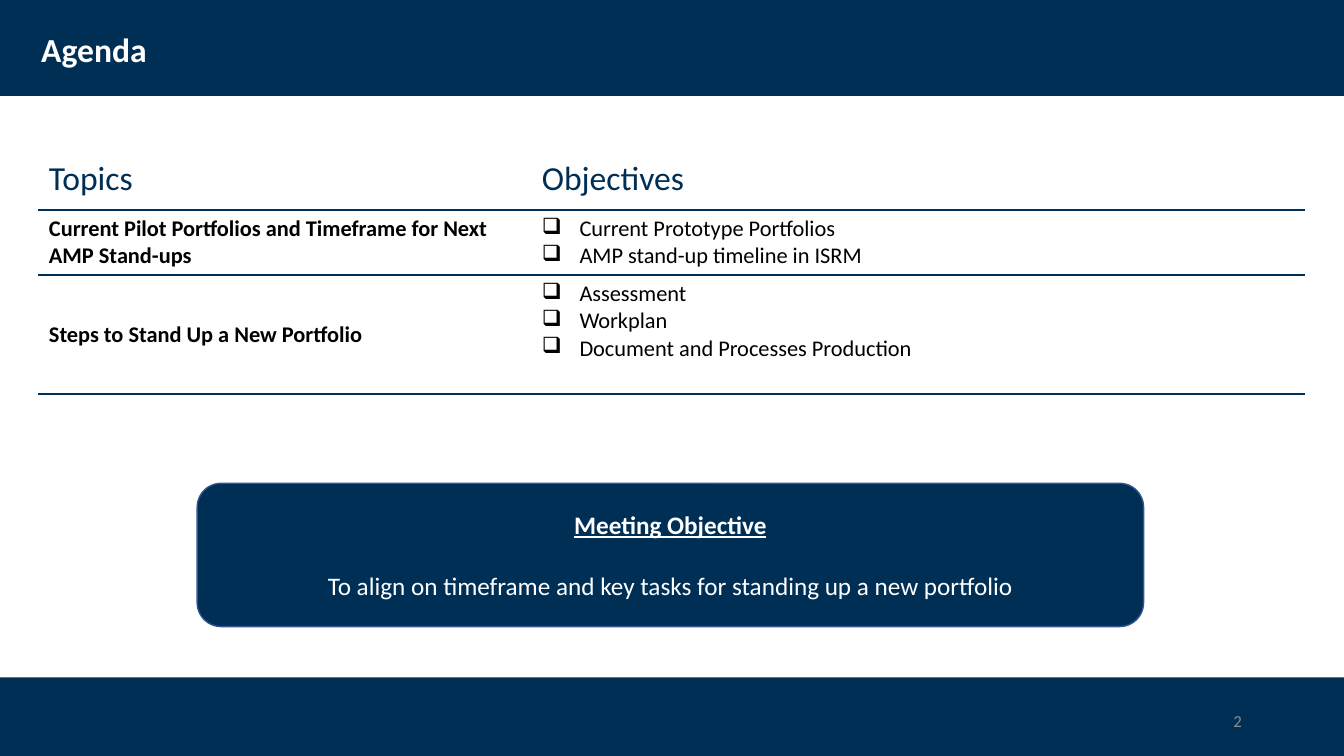
from lxml import etree
from pptx import Presentation
from pptx.dml.color import RGBColor
from pptx.enum.shapes import MSO_SHAPE
from pptx.enum.text import MSO_ANCHOR, PP_ALIGN
from pptx.oxml.ns import qn
from pptx.util import Cm, Pt

RECTANGLE, ROUNDED = MSO_SHAPE.RECTANGLE, MSO_SHAPE.ROUNDED_RECTANGLE
MIDDLE, TOP = MSO_ANCHOR.MIDDLE, MSO_ANCHOR.TOP
LEFT, CENTER, RIGHT = PP_ALIGN.LEFT, PP_ALIGN.CENTER, PP_ALIGN.RIGHT

WIDTH, HEIGHT = 33.87, 19.05
COLORS = {"navy": "002F56", "outline": "325491", "white": "FFFFFF",
          "black": "000000", "gray": "8C8C8C"}
FONT = "Calibri"
BULLET_INDENT = Cm(0.95)

HEADINGS = ["Topics", "Objectives"]
AGENDA = [
    ("Current Pilot Portfolios and Timeframe for Next AMP Stand-ups",
     ["Current Prototype Portfolios", "AMP stand-up timeline in ISRM"]),
    ("Steps to Stand Up a New Portfolio",
     ["Assessment", "Workplan", "Document and Processes Production"]),
]
COLUMN_WIDTHS = [12.42, 19.48]
ROW_HEIGHTS = [1.42, 1.64, 3.0]


def color(name):
    return RGBColor.from_string(COLORS[name])


class SlideBuilder:
    """Holds the slide and draws its elements in one style; lengths in cm."""

    def __init__(self, slide):
        self.slide = slide

    def fill_text(self, frame, lines, size, color_name, bold=False, align=LEFT, bullet=None):
        for index, line in enumerate(lines):
            paragraph = frame.paragraphs[0] if index == 0 else frame.add_paragraph()
            paragraph.text = line
            paragraph.alignment = align
            if bullet:
                self.add_bullet(paragraph, bullet)
            font = paragraph.font
            font.name, font.size, font.bold = FONT, Pt(size), bold
            font.color.rgb = color(color_name)

    def add_bullet(self, paragraph, character):
        properties = paragraph._p.get_or_add_pPr()
        properties.set("marL", str(BULLET_INDENT))
        properties.set("indent", str(-BULLET_INDENT))
        etree.SubElement(properties, qn("a:buChar"), char=character)

    def block(self, kind, left, top, width, height, line=None):
        shape = self.slide.shapes.add_shape(kind, Cm(left), Cm(top), Cm(width), Cm(height))
        shape.shadow.inherit = False
        shape.fill.solid()
        shape.fill.fore_color.rgb = color("navy")
        if line:
            shape.line.color.rgb = color(line)
            shape.line.width = Pt(1)
        else:
            shape.line.fill.background()
        return shape

    def text(self, text, left, top, width, height, size, color_name, **style):
        box = self.slide.shapes.add_textbox(Cm(left), Cm(top), Cm(width), Cm(height))
        frame = box.text_frame
        frame.word_wrap = True
        frame.vertical_anchor = MIDDLE
        self.fill_text(frame, [text], size, color_name, **style)
        return frame

    def cell_borders(self, cell, top_color):
        properties = cell._tc.get_or_add_tcPr()
        borders = [("L", "white", 1), ("R", "white", 1),
                   ("T", top_color, 1.5), ("B", "navy", 1.5)]
        for side, name, width in borders:
            line = etree.SubElement(properties, qn(f"a:ln{side}"), w=str(Pt(width)))
            fill = etree.SubElement(line, qn("a:solidFill"))
            etree.SubElement(fill, qn("a:srgbClr"), val=COLORS[name])

    def agenda_table(self, left, top):
        rows = [([topic], objectives) for topic, objectives in AGENDA]
        table = self.slide.shapes.add_table(
            len(ROW_HEIGHTS), len(COLUMN_WIDTHS), Cm(left), Cm(top),
            Cm(sum(COLUMN_WIDTHS)), Cm(sum(ROW_HEIGHTS))).table
        for column, width in zip(table.columns, COLUMN_WIDTHS):
            column.width = Cm(width)
        for row, height in zip(table.rows, ROW_HEIGHTS):
            row.height = Cm(height)
        for row_index, row in enumerate(table.rows):
            for column_index, cell in enumerate(row.cells):
                header = row_index == 0
                self.cell_borders(cell, "white" if header else "navy")
                cell.fill.solid()
                cell.fill.fore_color.rgb = color("white")
                cell.vertical_anchor = TOP if header else MIDDLE
                if header:
                    self.fill_text(cell.text_frame, [HEADINGS[column_index]], 24, "navy")
                else:
                    self.fill_text(cell.text_frame, rows[row_index - 1][column_index], 16,
                                   "black", bold=column_index == 0,
                                   bullet="❑" if column_index else None)
        table.cell(2, 1).vertical_anchor = TOP

    def objective_box(self, heading, statement, left, top, width, height):
        frame = self.block(ROUNDED, left, top, width, height, line="outline").text_frame
        frame.word_wrap = True
        frame.vertical_anchor = MIDDLE
        self.fill_text(frame, [heading, statement], 18, "white", align=CENTER)
        title, body = frame.paragraphs
        title.font.bold = title.font.underline = True
        body.space_before = Pt(22)


def main():
    presentation = Presentation()
    presentation.slide_width, presentation.slide_height = Cm(WIDTH), Cm(HEIGHT)
    builder = SlideBuilder(presentation.slides.add_slide(presentation.slide_layouts[6]))

    builder.block(RECTANGLE, 0, 0, WIDTH, 2.42)
    builder.block(RECTANGLE, 0, 17.07, WIDTH, HEIGHT - 17.07)
    title = builder.text("Agenda", 0.79, 0.38, 29.21, 1.85, 24, "white", bold=True)
    title.paragraphs[0].line_spacing = 0.9
    builder.text("2", 23.93, 17.65, 7.62, 1.02, 12, "gray", align=RIGHT)
    builder.agenda_table(0.98, 3.87)
    builder.objective_box("Meeting Objective",
                          "To align on timeframe and key tasks for standing up a new portfolio",
                          4.97, 12.18, 23.85, 3.61)
    presentation.save("out.pptx")


if __name__ == "__main__":
    main()
